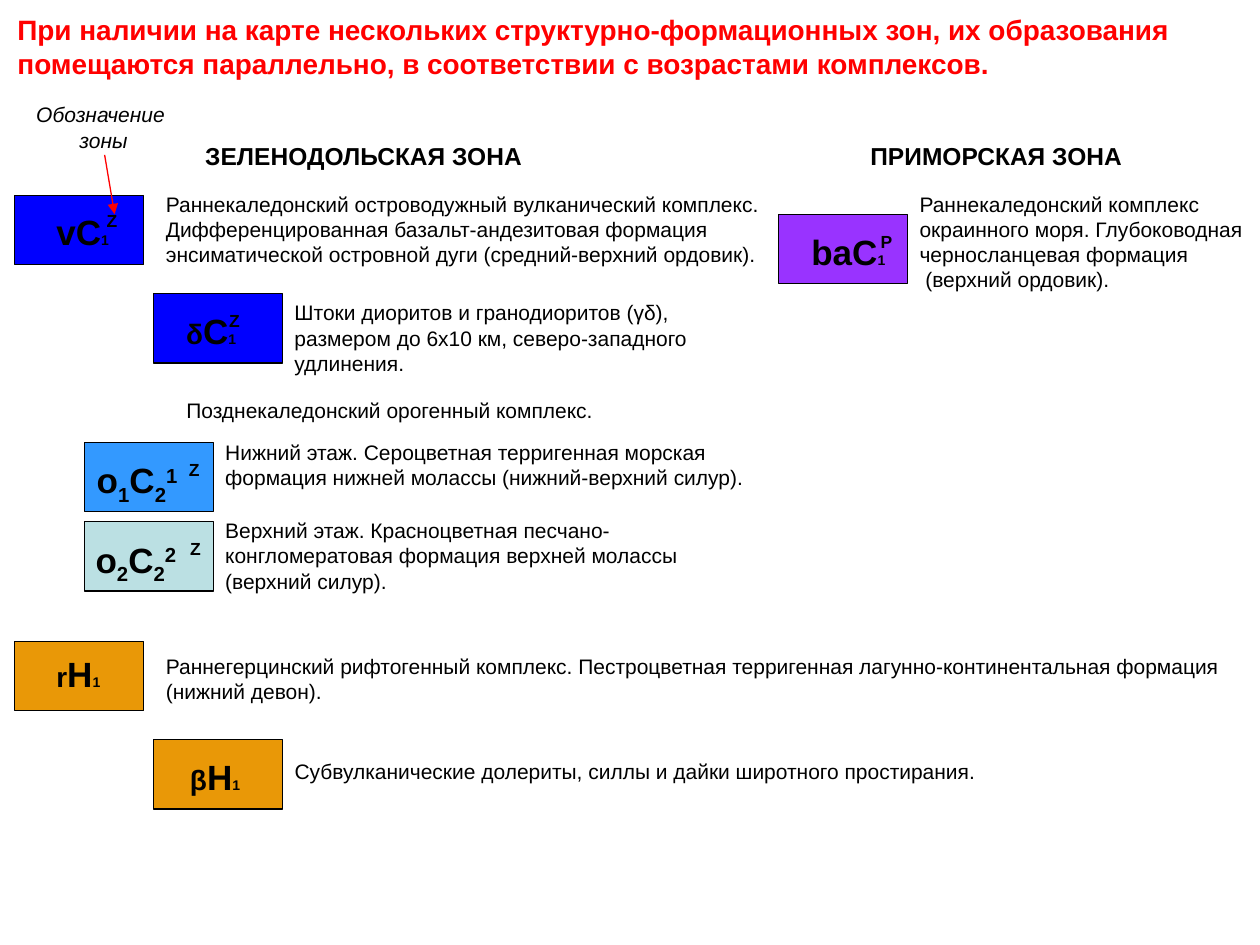
from dataclasses import dataclass

from lxml import etree
from pptx import Presentation
from pptx.dml.color import RGBColor
from pptx.enum import shapes, text
from pptx.oxml import ns
from pptx.util import Pt


@dataclass(frozen=True)
class Theme:
    font: str = "Arial"
    ink: str = "000000"
    accent: str = "FF0000"
    volcanic: str = "0000FF"
    lower_molasse: str = "3399FF"
    upper_molasse: str = "BBE0E3"
    rift: str = "E99807"
    marginal_sea: str = "9933FF"
    title: int = 16
    heading: int = 14
    body: int = 12
    zone: int = 10
    symbol: int = 20
    prefix: int = 16
    index: int = 8
    line: float = 0.75


@dataclass(frozen=True)
class Box:
    left: float
    top: float
    width: float
    height: float

    def inside(self, left, top, width, height):
        return Box(self.left + left, self.top + top, width, height)

    def lengths(self):
        return [Pt(value) for value in (self.left, self.top, self.width, self.height)]


THEME = Theme()
SWATCH = (73.7, 39.7)
SUB, SUPER = -25, 30


def add_spans(para, spans, color, style):
    for wording, size, baseline in spans:
        span = para.add_run()
        span.text = wording
        for name, value in {"name": THEME.font, "size": Pt(size), **style}.items():
            setattr(span.font, name, value)
        span.font.color.rgb = RGBColor.from_string(color)
        if baseline:
            span._r.get_or_add_rPr().set("baseline", str(baseline * 1000))


def add_text(page, box, lines, color=THEME.ink, wrap=True, align=None, **style):
    frame = page.shapes.add_textbox(*box.lengths()).text_frame
    frame.word_wrap = wrap
    frame.auto_size = text.MSO_AUTO_SIZE.SHAPE_TO_FIT_TEXT
    for number, spans in enumerate(lines):
        para = frame.add_paragraph() if number else frame.paragraphs[0]
        para.alignment = align
        add_spans(para, spans, color, style)


def plain(wording, size):
    return [[(line, size, 0)] for line in wording.split("\n")]


def add_swatch(page, box, color):
    swatch = page.shapes.add_shape(shapes.MSO_SHAPE.RECTANGLE, *box.lengths())
    swatch.shadow.inherit = False
    swatch.fill.solid()
    swatch.fill.fore_color.rgb = RGBColor.from_string(color)
    swatch.line.color.rgb = RGBColor.from_string(THEME.ink)
    swatch.line.width = Pt(THEME.line)


def add_entry(page, box, color, symbol, symbol_at, zone, label, label_at):
    add_swatch(page, box, color)
    add_text(page, box.inside(*symbol_at), [symbol], wrap=False, bold=True)
    if zone:
        letter, left = zone
        add_text(page, box.inside(left, symbol_at[1], 20.9, 19.4),
                 plain(letter, THEME.zone), wrap=False, bold=True)
    add_text(page, box.inside(*label_at), plain(label, THEME.body))


def indexed(letters, prefix=""):
    spans = [(prefix, THEME.prefix, 0)] if prefix else []
    return spans + [(letters, THEME.symbol, 0), ("1", THEME.index, 0)]


def staged(stage):
    pieces = [("о", 0), (stage, SUB), ("C", 0), ("2", SUB), (stage, SUPER)]
    return [(wording, THEME.symbol, baseline) for wording, baseline in pieces]


def add_zone_pointer(page, box):
    add_text(page, box.inside(0, 0, 92.2, 36), plain("Обозначение \nзоны", THEME.body),
             wrap=False, align=text.PP_ALIGN.CENTER, italic=True)
    ends = [(box.left + left, box.top + top) for left, top in ((46.8, 33.8), (52.5, 67.7))]
    arrow = page.shapes.add_connector(shapes.MSO_CONNECTOR.STRAIGHT,
                                      *(Pt(value) for end in ends for value in end))
    arrow.line.color.rgb = RGBColor.from_string(THEME.accent)
    arrow.line.width = Pt(THEME.line)
    etree.SubElement(arrow.line._get_or_add_ln(), ns.qn("a:tailEnd"), type="triangle")
    etree.SubElement(arrow._element.spPr, ns.qn("a:effectLst"))


def add_title(page, box):
    title = ("При наличии на карте нескольких структурно-формационных зон, их образования "
             "помещаются параллельно, в соответствии с возрастами комплексов.")
    add_text(page, box, plain(title, THEME.title), THEME.accent, bold=True)


def add_heading(page, box, wording):
    add_text(page, box, plain(wording, THEME.heading), wrap=False, bold=True)


def add_green_valley_zone(page, box):
    add_heading(page, box.inside(101.7, 0, 196.6, 23.8), "ЗЕЛЕНОДОЛЬСКАЯ ЗОНА")
    add_text(page, box.inside(90.9, 146.9, 333.4, 21.6),
             plain("Позднекаледонский орогенный комплекс.", THEME.body))
    entries = [
        ((0, 34.6), THEME.volcanic, indexed("vC"), (16.6, 5, 44.6, 31),
         ("Z", 45.4),
         "Раннекаледонский островодужный вулканический комплекс. "
         "Дифференцированная базальт-андезитовая формация "
         "энсиматической островной дуги (средний-верхний ордовик).",
         (79.2, -5.8, 362.9, 50.4)),
        ((79.3, 90.8), THEME.volcanic, indexed("C", "δ"), (11.5, 5.8, 43.2, 31),
         ("Z", 36),
         "Штоки диоритов и гранодиоритов (γδ), размером до 6х10 км, "
         "северо-западного удлинения.",
         (73.4, 0, 283.7, 50.4)),
        ((39.7, 175.7), THEME.lower_molasse, staged("1"), (0, 5.8, 63.4, 31),
         ("Z", 52.6),
         "Нижний этаж. Сероцветная терригенная морская формация "
         "нижней молассы (нижний-верхний силур).",
         (73.4, -5, 323.3, 36)),
        ((39.7, 221.1), THEME.upper_molasse, staged("2"), (-0.7, 5.8, 63.4, 31),
         ("Z", 53.3),
         "Верхний этаж. Красноцветная песчано-конгломератовая формация "
         "верхней молассы (верхний силур).",
         (73.4, -5.8, 311.8, 50.4)),
        ((0, 289.5), THEME.rift, indexed("Н", "r"), (16.6, 2.9, 39.6, 31),
         None,
         "Раннегерцинский рифтогенный комплекс. Пестроцветная терригенная "
         "лагунно-континентальная формация (нижний девон).",
         (79.2, 3.6, 629.3, 36)),
        ((79.3, 345.6), THEME.rift, indexed("Н", "β"), (13.7, 5.8, 43.2, 31),
         None,
         "Субвулканические долериты, силлы и дайки широтного простирания.",
         (73.4, 7.2, 538.6, 21.6)),
    ]
    for corner, *content in entries:
        add_entry(page, box.inside(*corner, *SWATCH), *content)


def add_seaside_zone(page, box):
    add_heading(page, box.inside(45.3, 0, 158.4, 23.8), "ПРИМОРСКАЯ ЗОНА")
    add_entry(page, box.inside(0, 45.4, *SWATCH), THEME.marginal_sea,
              indexed("baC"), (11.5, 5.8, 56.9, 31), ("P", 51.1),
              "Раннекаледонский комплекс\nокраинного моря. Глубоководная\n"
              "черносланцевая формация\n (верхний ордовик).",
              (73.4, -16.6, 201.6, 64.8))


def main():
    deck = Presentation()
    deck.slide_width, deck.slide_height = Pt(720), Pt(540)
    page = deck.slides.add_slide(deck.slide_layouts[6])
    add_title(page, Box(2.9, 3.6, 717, 46.1))
    add_green_valley_zone(page, Box(8.5, 77, 708, 386))
    add_seaside_zone(page, Box(445, 77, 275, 94))
    add_zone_pointer(page, Box(13, 54.7, 92.2, 67.7))
    deck.save("out.pptx")


if __name__ == "__main__":
    main()
